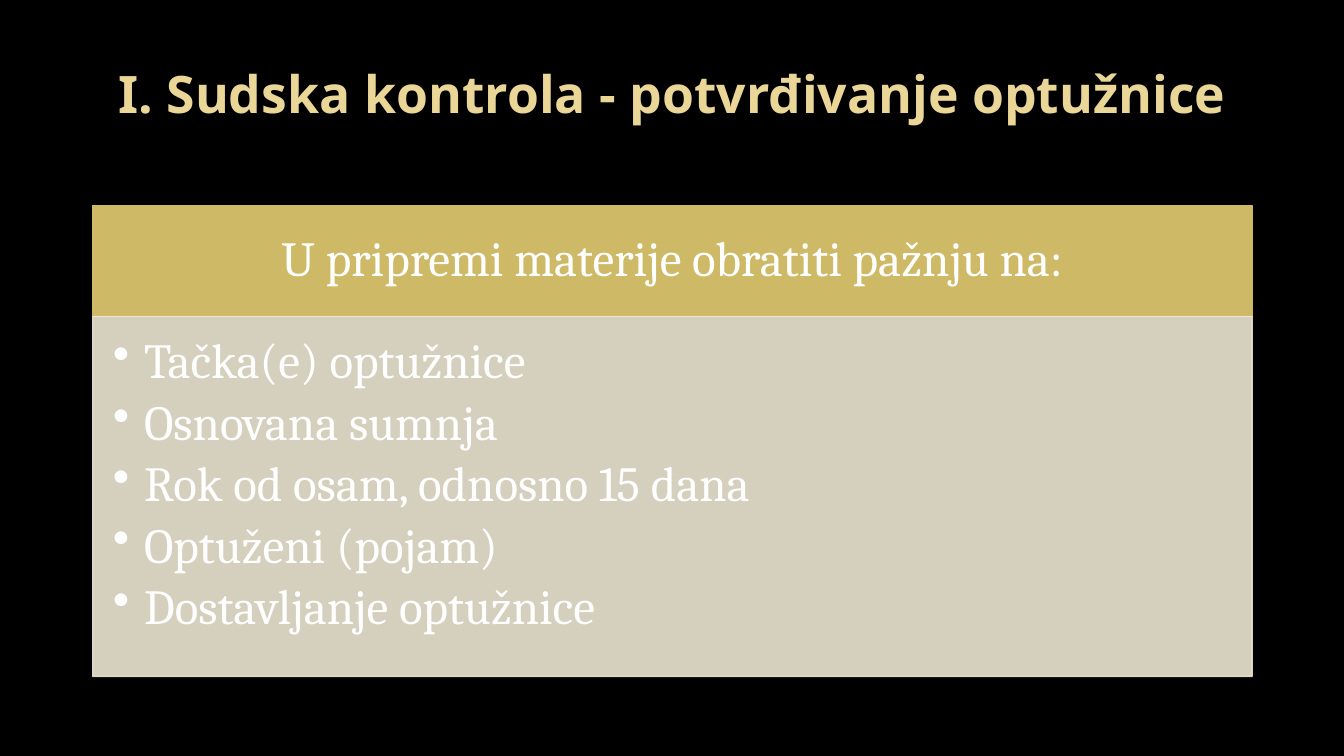
from lxml import etree
from pptx import Presentation
from pptx.dml.color import RGBColor
from pptx.enum import shapes, text
from pptx.oxml import ns
from pptx.util import Inches, Pt

TITLE = "I. Sudska kontrola - potvrđivanje optužnice"
HEADING = "U pripremi materije obratiti pažnju na:"
POINTS = [
    "Tačka(e) optužnice",
    "Osnovana sumnja",
    "Rok od osam, odnosno 15 dana",
    "Optuženi (pojam)",
    "Dostavljanje optužnice",
]

THEME = {
    "background": "000000", "title": "EAD696", "heading": "CEB966",
    "body": "EDE6D3", "text": "FFFFFF",
    "title_font": "Noto Sans", "text_font": "Cambria",
    "title_size": 36.9, "text_size": 35,
}
BODY_ALPHA = 90
BULLET_INDENT = 0.31
LEFT, TOP, WIDTH = 0.92, 2.04, 11.5
HEADING_HEIGHT, BODY_HEIGHT = 1.1, 3.57


def rgb(role):
    return RGBColor.from_string(THEME[role])


def write(shape, lines, anchor, insets, font, paragraph_format):
    """Fill a shape with one paragraph per line; insets run left, top, right, bottom."""
    frame = shape.text_frame
    frame.word_wrap = True
    frame.vertical_anchor = anchor
    for side, inset in zip(("left", "top", "right", "bottom"), insets):
        setattr(frame, f"margin_{side}", Inches(inset))
    for number, line in enumerate(lines):
        paragraph = frame.add_paragraph() if number else frame.paragraphs[0]
        for name, value in paragraph_format.items():
            setattr(paragraph, name, value)
        run = paragraph.add_run()
        run.text = line
        run.font.color.rgb = rgb(font["color"])
        for name in ("name", "size", "bold"):
            setattr(run.font, name, font[name])


def add_band(slide, top, height, role):
    band = slide.shapes.add_shape(
        shapes.MSO_SHAPE.RECTANGLE,
        Inches(LEFT), Inches(top), Inches(WIDTH), Inches(height))
    band.shadow.inherit = False
    band.fill.solid()
    band.fill.fore_color.rgb = rgb(role)
    band.line.color.rgb = rgb(role)
    band.line.width = Pt(1)
    return band


def set_alpha(shape, percent):
    for color in shape.element.spPr.iter(ns.qn("a:srgbClr")):
        etree.SubElement(color, ns.qn("a:alpha"), val=str(percent * 1000))


def add_bullets(shape):
    for paragraph in shape.text_frame.paragraphs:
        properties = paragraph._p.get_or_add_pPr()
        indent = Inches(BULLET_INDENT)
        properties.set("marL", str(indent))
        properties.set("indent", str(-indent))
        etree.SubElement(properties, ns.qn("a:buChar"), char="•")


def main():
    deck = Presentation()
    deck.slide_width, deck.slide_height = Inches(13.33), Inches(7.5)
    slide = deck.slides.add_slide(deck.slide_layouts[6])
    slide.background.fill.solid()
    slide.background.fill.fore_color.rgb = rgb("background")

    title_font = {"name": THEME["title_font"], "size": Pt(THEME["title_size"]),
                  "bold": True, "color": "title"}
    text_font = {"name": THEME["text_font"], "size": Pt(THEME["text_size"]),
                 "bold": False, "color": "text"}
    middle, center = text.MSO_ANCHOR.MIDDLE, text.PP_ALIGN.CENTER

    title = slide.shapes.add_textbox(Inches(0.67), Inches(0.3), Inches(12), Inches(1.25))
    write(title, [TITLE], middle, (0.1, 0.05, 0.1, 0.05), title_font,
          {"alignment": center})

    heading = add_band(slide, TOP, HEADING_HEIGHT, "heading")
    write(heading, [HEADING], middle, (0.27, 0.16, 0.27, 0.16), text_font,
          {"alignment": center, "line_spacing": 0.9})

    body = add_band(slide, TOP + HEADING_HEIGHT, BODY_HEIGHT, "body")
    set_alpha(body, BODY_ALPHA)
    write(body, POINTS, text.MSO_ANCHOR.TOP, (0.2, 0.2, 0.27, 0.31), text_font,
          {"alignment": text.PP_ALIGN.LEFT, "line_spacing": 0.9, "space_after": Pt(6)})
    add_bullets(body)

    deck.save("out.pptx")


if __name__ == "__main__":
    main()
